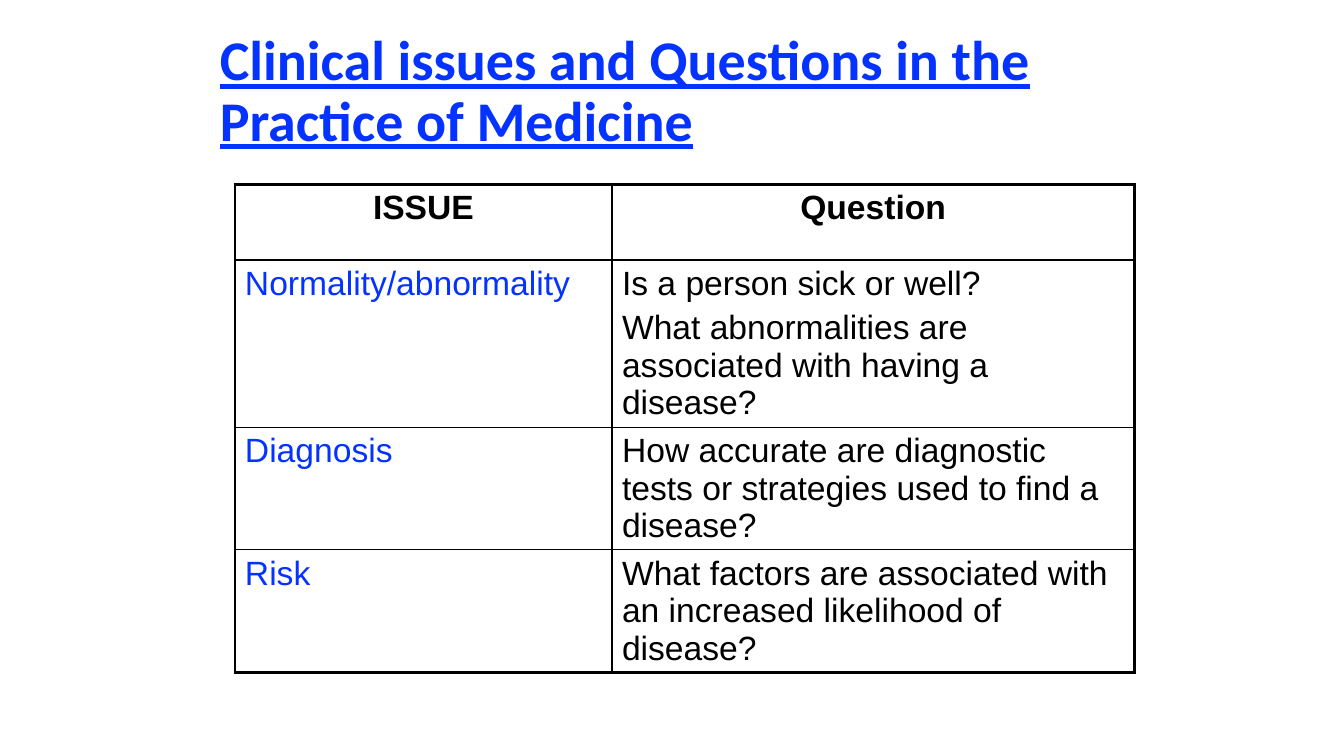
from lxml.etree import SubElement
from pptx import Presentation
from pptx.dml.color import RGBColor
from pptx.enum.text import MSO_ANCHOR, PP_ALIGN
from pptx.oxml.ns import qn
from pptx.util import Inches, Pt

BLUE, BLACK = "0432FF", "000000"
COLUMN_WIDTHS = [3.74, 5.18]
ROW_HEIGHTS = [0.75, 1.66, 1.21, 1.21]
THIN, THICK = 1, 2.25
ROWS = [
    [["ISSUE"], ["Question"]],
    [["Normality/abnormality"],
     ["Is a person sick or well?",
      "What abnormalities are associated with having a disease?"]],
    [["Diagnosis"],
     ["How accurate are diagnostic tests or strategies used to find a disease?"]],
    [["Risk"],
     ["What factors are associated with an increased likelihood of disease?"]],
]


def format_span(span, color, **values):
    for name, value in values.items():
        setattr(span.font, name, value)
    span.font.color.rgb = RGBColor.from_string(color)


def add_border(cell, side, width):
    line = SubElement(cell._tc.get_or_add_tcPr(), qn(f"a:ln{side}"), w=str(Pt(width)))
    fill = SubElement(line, qn("a:solidFill"))
    SubElement(fill, qn("a:srgbClr"), val=BLACK)


deck = Presentation()
deck.slide_width, deck.slide_height = Inches(13.33), Inches(7.5)
page = deck.slides.add_slide(deck.slide_layouts[5])

title = page.shapes.title
title_place = {"left": 2.08, "top": 0.17, "width": 9.58, "height": 1.5}
for name, value in title_place.items():
    setattr(title, name, Inches(value))
title.text_frame.vertical_anchor = MSO_ANCHOR.MIDDLE
para = title.text_frame.paragraphs[0]
para.alignment = PP_ALIGN.LEFT
para.line_spacing = 0.9
span = para.add_run()
span.text = "Clinical issues and Questions in the Practice of Medicine"
format_span(span, BLUE, name="Calibri", size=Pt(40), bold=True, underline=True)

table = page.shapes.add_table(
    len(ROWS), len(COLUMN_WIDTHS), Inches(2.33), Inches(1.83),
    Inches(sum(COLUMN_WIDTHS)), Inches(sum(ROW_HEIGHTS))).table
table.horz_banding = False
for column, width in zip(table.columns, COLUMN_WIDTHS):
    column.width = Inches(width)
for row, height in zip(table.rows, ROW_HEIGHTS):
    row.height = Inches(height)

last_row, last_column = len(ROWS) - 1, len(COLUMN_WIDTHS) - 1
for r, row_texts in enumerate(ROWS):
    for c, texts in enumerate(row_texts):
        cell = table.cell(r, c)
        outer_sides = {"L": c == 0, "R": c == last_column,
                       "T": r == 0, "B": r == last_row}
        for side, is_outer in outer_sides.items():
            add_border(cell, side, THICK if is_outer else THIN)
        cell.fill.background()
        is_header = r == 0
        for i, text in enumerate(texts):
            frame = cell.text_frame
            para = frame.add_paragraph() if i else frame.paragraphs[0]
            para.alignment = PP_ALIGN.CENTER if is_header else PP_ALIGN.LEFT
            para.space_before = Pt(4.8)
            span = para.add_run()
            span.text = text
            format_span(span, BLUE if c == 0 and not is_header else BLACK,
                        name="Arial", size=Pt(24), bold=is_header)

deck.save("out.pptx")
